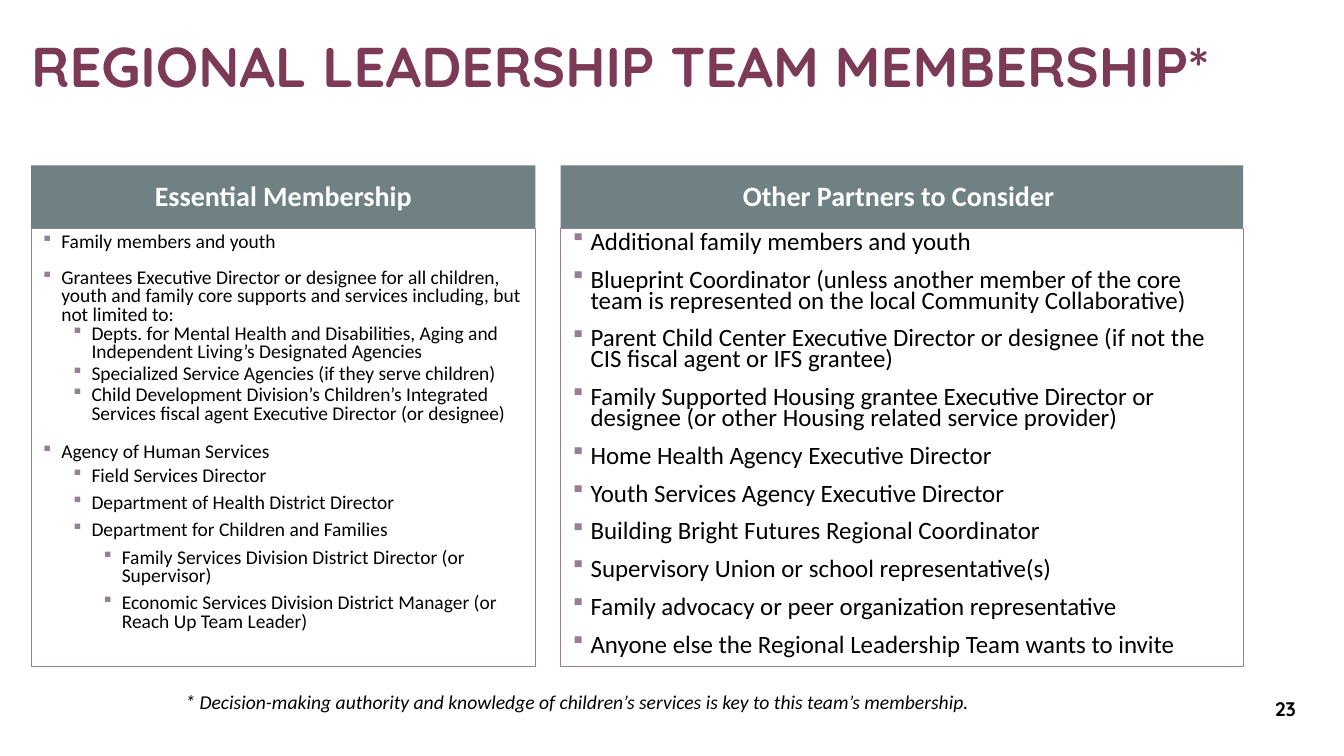
import lxml.etree
import pptx
import pptx.dml.color
import pptx.enum.shapes
import pptx.enum.text
import pptx.oxml.ns
import pptx.util

PX = 9144
ALIGN = pptx.enum.text.PP_ALIGN
ANCHOR = pptx.enum.text.MSO_ANCHOR
SLATE, MAUVE, PLUM, WHITE, BLACK = "6F8183", "967E96", "7C3A57", "FFFFFF", "000000"
INDENTS = [20, 50, 80]
HEADER_HEIGHT = 63

ESSENTIAL = [
    (0, 0, 0, "Family members and youth"),
    (0, 12, 0, "Grantees Executive Director or designee for all children, youth and family core supports and services including, but not limited to:"),
    (1, 0, 2, "Depts. for Mental Health and Disabilities, Aging and Independent Living’s Designated Agencies"),
    (1, 0, 2, "Specialized Service Agencies (if they serve children)"),
    (1, 0, 2, "Child Development Division’s Children’s Integrated Services fiscal agent Executive Director (or designee)"),
    (0, 12, 0, "Agency of Human Services"),
    (1, 4, 2, "Field Services Director"),
    (1, 4, 2, "Department of Health District Director"),
    (1, 4, 2, "Department for Children and Families"),
    (2, 4, 2, "Family Services Division District Director (or Supervisor)"),
    (2, 4, 2, "Economic Services Division District Manager (or Reach Up Team Leader)"),
]
PARTNERS = [
    "Additional family members and youth",
    "Blueprint Coordinator (unless another member of the core team is represented on the local Community Collaborative)",
    "Parent Child Center Executive Director or designee (if not the CIS fiscal agent or IFS grantee)",
    "Family Supported Housing grantee Executive Director or designee (or other Housing related service provider)",
    "Home Health Agency Executive Director",
    "Youth Services Agency Executive Director",
    "Building Bright Futures Regional Coordinator",
    "Supervisory Union or school representative(s)",
    "Family advocacy or peer organization representative",
    "Anyone else the Regional Leadership Team wants to invite",
]


def color(value):
    return pptx.dml.color.RGBColor.from_string(value)


def apply(target, formats):
    for name, value in formats.items():
        setattr(target, name, value)


def write(paragraph, text, ink, font, **formats):
    apply(paragraph, formats)
    run = paragraph.add_run()
    run.text = text
    apply(run.font, {**font, "size": pptx.util.Pt(font["size"])})
    run.font.color.rgb = color(ink)


def add_bullet(paragraph, level):
    paragraph.level = level
    properties = paragraph._p.get_or_add_pPr()
    properties.set("marL", str(INDENTS[level] * PX))
    properties.set("indent", str(-INDENTS[0] * PX))
    tag = pptx.oxml.ns.qn
    bullet_color = lxml.etree.SubElement(properties, tag("a:buClr"))
    lxml.etree.SubElement(bullet_color, tag("a:srgbClr"), val=MAUVE)
    lxml.etree.SubElement(properties, tag("a:buSzPct"), val="85000")
    lxml.etree.SubElement(properties, tag("a:buChar"), char="▪")


def add_rectangle(slide, box, anchor):
    shape = slide.shapes.add_shape(
        pptx.enum.shapes.MSO_SHAPE.RECTANGLE, *(length * PX for length in box))
    shape.shadow.inherit = False
    apply(shape.text_frame, {"word_wrap": True, "vertical_anchor": anchor})
    return shape


def add_label(slide, box, text, ink, font, anchor, **formats):
    label = slide.shapes.add_textbox(*(length * PX for length in box))
    apply(label.text_frame, {"word_wrap": True, "vertical_anchor": anchor})
    write(label.text_frame.paragraphs[0], text, ink, font, **formats)


def add_panel(slide, box, heading, items, size, spacing):
    left, top, width, height = box
    header = add_rectangle(slide, (left, top, width, HEADER_HEIGHT), ANCHOR.MIDDLE)
    header.fill.solid()
    header.fill.fore_color.rgb = color(SLATE)
    header.line.fill.background()
    write(header.text_frame.paragraphs[0], heading, WHITE,
          {"name": "Calibri", "size": 20, "bold": True},
          alignment=ALIGN.CENTER, line_spacing=0.9)

    body_box = (left, top + HEADER_HEIGHT, width, height - HEADER_HEIGHT)
    body = add_rectangle(slide, body_box, ANCHOR.TOP)
    body.fill.background()
    body.line.color.rgb = color(MAUVE)
    body.line.width = pptx.util.Pt(0.75)
    frame = body.text_frame
    for index, (level, before, after, text) in enumerate(items):
        paragraph = frame.add_paragraph() if index else frame.paragraphs[0]
        add_bullet(paragraph, level)
        write(paragraph, text, BLACK, {"name": "Calibri", "size": size},
              alignment=ALIGN.LEFT, line_spacing=spacing,
              space_before=pptx.util.Pt(before), space_after=pptx.util.Pt(after))


def add_footer(slide, box):
    left, top, width, height = box
    add_label(slide, (left, top, 840, height),
              "* Decision-making authority and knowledge of children’s services is key to this team’s membership.",
              BLACK, {"name": "Calibri", "size": 14, "italic": True}, ANCHOR.TOP)
    add_label(slide, (left + width - 62, top + 11, 62, 25), "23", BLACK,
              {"name": "Quicksand", "size": 14, "bold": True},
              ANCHOR.MIDDLE, alignment=ALIGN.RIGHT)


def main():
    presentation = pptx.Presentation()
    apply(presentation, {"slide_width": 1333 * PX, "slide_height": 750 * PX})
    slide = presentation.slides.add_slide(presentation.slide_layouts[6])
    add_label(slide, (21, 29, 1212, 80), "REGIONAL LEADERSHIP TEAM MEMBERSHIP*", PLUM,
              {"name": "Quicksand", "size": 40, "bold": True},
              ANCHOR.MIDDLE, line_spacing=0.9)
    add_panel(slide, (31, 164, 500, 497), "Essential Membership", ESSENTIAL, 13.9, 0.8)
    partners = [(0, 12 if index else 0, 0, text) for index, text in enumerate(PARTNERS)]
    add_panel(slide, (556, 164, 677, 497), "Other Partners to Consider ", partners, 17.8, 0.7)
    add_footer(slide, (174, 680, 1121, 64))
    presentation.save("out.pptx")


if __name__ == "__main__":
    main()
